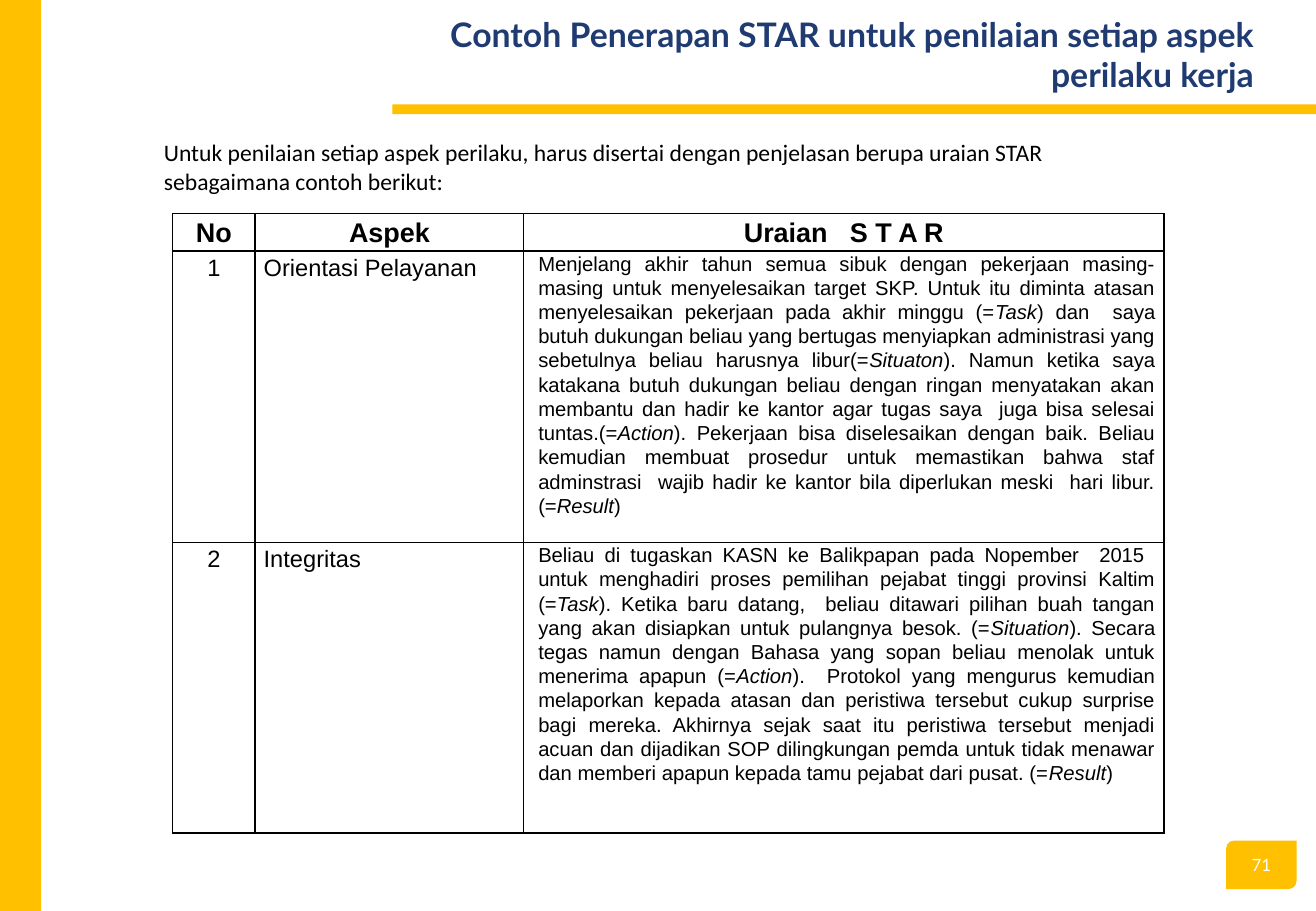
from lxml import etree
from pptx import Presentation
from pptx.dml.color import RGBColor
from pptx.enum.shapes import MSO_SHAPE
from pptx.enum.text import MSO_ANCHOR, MSO_AUTO_SIZE, PP_ALIGN
from pptx.oxml import parse_xml
from pptx.oxml.ns import nsdecls
from pptx.util import Inches, Pt

RECTANGLE = MSO_SHAPE.RECTANGLE
ROUNDED_TAB = MSO_SHAPE.ROUND_2_DIAG_RECTANGLE
MIDDLE = MSO_ANCHOR.MIDDLE
NO_AUTOFIT = MSO_AUTO_SIZE.NONE
CENTER, RIGHT, JUSTIFY = PP_ALIGN.CENTER, PP_ALIGN.RIGHT, PP_ALIGN.JUSTIFY
GOLD, NAVY, BLACK, WHITE = "FFC000", "1F3B72", "000000", "FFFFFF"

HEADERS = ["No", "Aspek", "Uraian   S T A R"]
ASPECTS = [
    ["1", "Orientasi Pelayanan",
     "Menjelang akhir tahun semua sibuk dengan pekerjaan masing-masing untuk menyelesaikan target SKP. "
     "Untuk itu diminta atasan menyelesaikan pekerjaan pada akhir minggu (=*Task*) dan  saya butuh "
     "dukungan beliau yang bertugas menyiapkan administrasi yang sebetulnya beliau harusnya "
     "libur(=*Situaton*). Namun ketika saya katakana butuh dukungan beliau dengan ringan menyatakan "
     "akan membantu dan hadir ke kantor agar tugas saya  juga bisa selesai tuntas.(=*Action*). "
     "Pekerjaan bisa diselesaikan dengan baik. Beliau kemudian membuat prosedur untuk memastikan "
     "bahwa staf adminstrasi  wajib hadir ke kantor bila diperlukan meski  hari libur. (=*Result*)"],
    ["2", "Integritas",
     "Beliau di tugaskan KASN ke Balikpapan pada Nopember  2015  untuk menghadiri proses pemilihan "
     "pejabat tinggi provinsi Kaltim (=*Task*). Ketika baru datang,  beliau ditawari pilihan buah "
     "tangan yang akan disiapkan untuk pulangnya besok. (=*Situation*). Secara tegas namun dengan "
     "Bahasa yang sopan beliau menolak untuk menerima apapun (=*Action*).  Protokol yang mengurus "
     "kemudian melaporkan kepada atasan dan peristiwa tersebut cukup surprise bagi mereka. Akhirnya "
     "sejak saat itu peristiwa tersebut menjadi acuan dan dijadikan SOP dilingkungan pemda untuk "
     "tidak menawar dan memberi apapun kepada tamu pejabat dari pusat. (=*Result*)"],
]
COLUMN_WIDTHS = [0.68, 2.21, 5.27]
ROW_HEIGHTS = [0.29, 2.4, 2.39]


def color(value):
    return RGBColor.from_string(value)


def set_font(paragraph, name, size, value, bold=False):
    font = paragraph.font
    font.name = name
    font.size = Pt(size)
    font.bold = bold
    font.color.rgb = color(value)


presentation = Presentation()
presentation.slide_width = Inches(10.83)
presentation.slide_height = Inches(7.5)
slide = presentation.slides.add_slide(presentation.slide_layouts[5])

gold_shapes = []
for kind, left, top, width, height in [
    (RECTANGLE, 3.23, 0.86, 7.6, 0.08),
    (RECTANGLE, 0, 0, 0.34, 7.5),
    (ROUNDED_TAB, 10.09, 6.92, 0.58, 0.4),
]:
    shape = slide.shapes.add_shape(kind, Inches(left), Inches(top), Inches(width), Inches(height))
    shape.shadow.inherit = False
    shape.fill.solid()
    shape.fill.fore_color.rgb = color(GOLD)
    shape.line.fill.background()
    gold_shapes.append(shape)

page_frame = gold_shapes[-1].text_frame
page_frame.text = "71"
page_frame.vertical_anchor = MIDDLE
page_frame.paragraphs[0].alignment = CENTER
set_font(page_frame.paragraphs[0], "Lato", 10, WHITE)

title = slide.shapes.title
title.left, title.top = Inches(3.2), Inches(0.17)
title.width, title.height = Inches(7.22), Inches(0.55)
title_frame = title.text_frame
title_frame.text = "Contoh Penerapan STAR untuk penilaian setiap aspek perilaku kerja"
title_frame.auto_size = NO_AUTOFIT
title_frame.vertical_anchor = MIDDLE
title_frame.paragraphs[0].alignment = RIGHT
set_font(title_frame.paragraphs[0], "Lato", 20, NAVY, True)

intro = slide.shapes.add_textbox(Inches(1.25), Inches(1.09), Inches(8.51), Inches(0.57))
intro.text_frame.word_wrap = True
intro.text_frame.text = (
    "Untuk penilaian setiap aspek perilaku, harus disertai dengan penjelasan berupa uraian STAR "
    "sebagaimana contoh berikut:"
)
set_font(intro.text_frame.paragraphs[0], "Calibri", 14, BLACK)

table = slide.shapes.add_table(
    len(ROW_HEIGHTS), len(COLUMN_WIDTHS), Inches(1.42), Inches(1.76),
    Inches(sum(COLUMN_WIDTHS)), Inches(sum(ROW_HEIGHTS)),
).table
table.first_row = False
table.horz_banding = False
for column, width in zip(table.columns, COLUMN_WIDTHS):
    column.width = Inches(width)
for row, height in zip(table.rows, ROW_HEIGHTS):
    row.height = Inches(height)

for row_index, texts in enumerate([HEADERS] + ASPECTS):
    for column_index, text in enumerate(texts):
        cell = table.cell(row_index, column_index)
        cell.margin_left = cell.margin_right = Inches(0.07)
        cell.margin_top = cell.margin_bottom = 0
        is_header = row_index == 0
        is_description = column_index == 2 and not is_header
        paragraph = cell.text_frame.paragraphs[0]
        for part_index, part in enumerate(text.split("*")):
            run = paragraph.add_run()
            run.text = part
            if part_index % 2:
                run.font.italic = True
        paragraph.alignment = CENTER if is_header or column_index == 0 else JUSTIFY
        paragraph.line_spacing = 1.07 if is_description else 1.15
        if is_description:
            paragraph._p.get_or_add_pPr().set("marL", str(Inches(0.05)))
        size = 16 if is_header else 12 if is_description else 14
        set_font(paragraph, "Arial", size, BLACK, is_header)
        properties = cell._tc.get_or_add_tcPr()
        for side in ("lnL", "lnR", "lnT", "lnB"):
            border = parse_xml(f'<a:{side} {nsdecls("a")} w="{Pt(1)}"/>')
            fill = etree.SubElement(border, border.tag.replace(side, "solidFill"))
            etree.SubElement(fill, border.tag.replace(side, "srgbClr"), val=BLACK)
            properties.append(border)
        cell.fill.background()

presentation.save("out.pptx")
